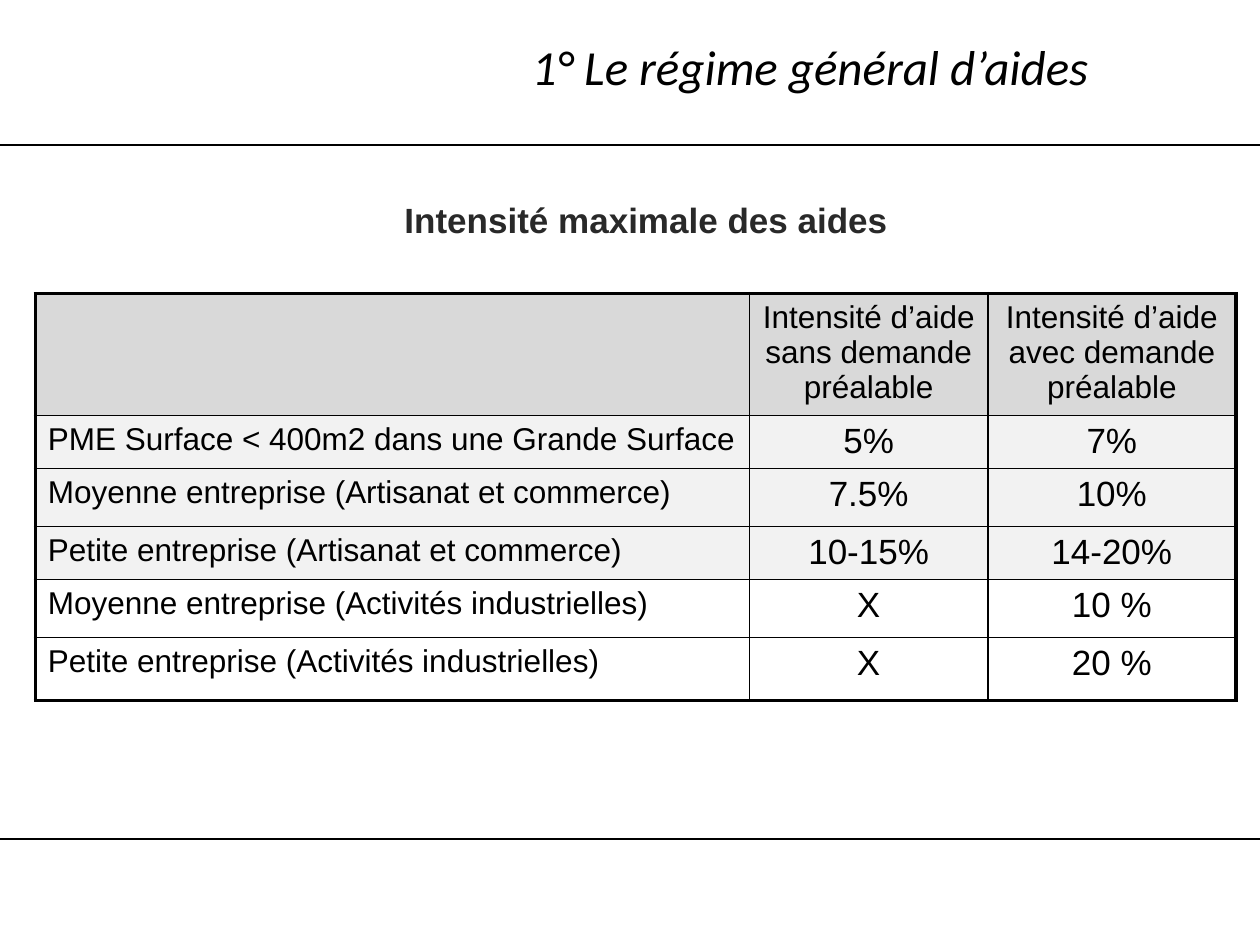
"""Build the slide on the maximum intensity of aid under the general scheme."""
from lxml.etree import SubElement
from pptx import Presentation
from pptx.dml.color import RGBColor
from pptx.enum.shapes import MSO_CONNECTOR as Connector
from pptx.enum.text import MSO_ANCHOR as Anchor, PP_ALIGN as Align
from pptx.oxml.ns import qn
from pptx.util import Inches, Pt

BLACK = RGBColor(0x00, 0x00, 0x00)
CHARCOAL = RGBColor(0x29, 0x29, 0x29)
HEADER_GREY = RGBColor(0xD9, 0xD9, 0xD9)
ROW_GREY = RGBColor(0xF2, 0xF2, 0xF2)

COLUMN_WIDTHS = [5.67, 1.89, 1.97]
ROW_HEIGHTS = [0.97, 0.42, 0.46, 0.42, 0.46, 0.5]
ROW_FILLS = [HEADER_GREY, ROW_GREY, ROW_GREY, ROW_GREY, None, None]
ROWS = [
    ["", "Intensité d’aide sans demande préalable", "Intensité d’aide avec demande préalable"],
    ["PME Surface < 400m2 dans une Grande Surface", "5%", "7%"],
    ["Moyenne entreprise (Artisanat et commerce)", "7.5%", "10%"],
    ["Petite entreprise (Artisanat et commerce)", "10-15%", "14-20%"],
    ["Moyenne entreprise (Activités industrielles)", "X", "10 %"],
    ["Petite entreprise (Activités industrielles)", "X", "20 %"],
]


def add_span(para, text, size, name="Arial", color=BLACK, bold=False, italic=False):
    span = para.add_run()
    span.text = text
    span.font.size = Pt(size)
    span.font.name = name
    span.font.color.rgb = color
    span.font.bold = bold
    span.font.italic = italic


def set_borders(cell, widths):
    properties = cell._tc.get_or_add_tcPr()
    for index, (side, width) in enumerate(widths.items()):
        border = properties.makeelement(qn(f"a:{side}"), {"w": str(Pt(width))})
        fill = SubElement(border, qn("a:solidFill"))
        SubElement(fill, qn("a:srgbClr"), val=str(BLACK))
        properties.insert(index, border)


deck = Presentation()
deck.slide_width, deck.slide_height = Inches(10), Inches(7.5)
page = deck.slides.add_slide(deck.slide_layouts[6])

for y in (1.15, 6.66):
    rule = page.shapes.add_connector(Connector.STRAIGHT, 0, Inches(y), Inches(10), Inches(y))
    rule.line.color.rgb = BLACK
    rule.line.width = Pt(1)
    SubElement(rule._element.spPr, qn("a:effectLst"))

table = page.shapes.add_table(
    len(ROWS), len(COLUMN_WIDTHS), Inches(0.28), Inches(2.33),
    Inches(sum(COLUMN_WIDTHS)), Inches(sum(ROW_HEIGHTS)),
).table
table.first_row = table.horz_banding = False
for column, width in zip(table.columns, COLUMN_WIDTHS):
    column.width = Inches(width)
for row, height in zip(table.rows, ROW_HEIGHTS):
    row.height = Inches(height)

last_row, last_column = len(ROWS) - 1, len(COLUMN_WIDTHS) - 1
for r, (texts, row_fill) in enumerate(zip(ROWS, ROW_FILLS)):
    for c, text in enumerate(texts):
        cell = table.cell(r, c)
        if row_fill is None:
            cell.fill.background()
        else:
            cell.fill.solid()
            cell.fill.fore_color.rgb = row_fill
        set_borders(cell, {
            "lnL": 2.25 if c == 0 else 1,
            "lnR": 2.25 if c == last_column else 1,
            "lnT": 2.25 if r == 0 else 1,
            "lnB": 2.25 if r == last_row else 1,
        })
        if text:
            para = cell.text_frame.paragraphs[0]
            para.alignment = Align.LEFT if c == 0 else Align.CENTER
            add_span(para, text, 18 if r == 0 or c == 0 else 20)

title = page.shapes.add_textbox(Inches(3.43), Inches(0.17), Inches(6.57), Inches(0.71)).text_frame
title.word_wrap = True
title.vertical_anchor = Anchor.MIDDLE
title.margin_right = Inches(0.67)
title.paragraphs[0].alignment = Align.CENTER
add_span(title.paragraphs[0], "1° Le régime général d’aides", 28, name="Calibri", italic=True)

subtitle = page.shapes.add_textbox(Inches(3.03), Inches(1.53), Inches(4.41), Inches(0.44)).text_frame
subtitle.word_wrap = True
subtitle.margin_left = Inches(0.18)
add_span(subtitle.paragraphs[0], "Intensité maximale des aides", 20, color=CHARCOAL, bold=True)

deck.save("out.pptx")
